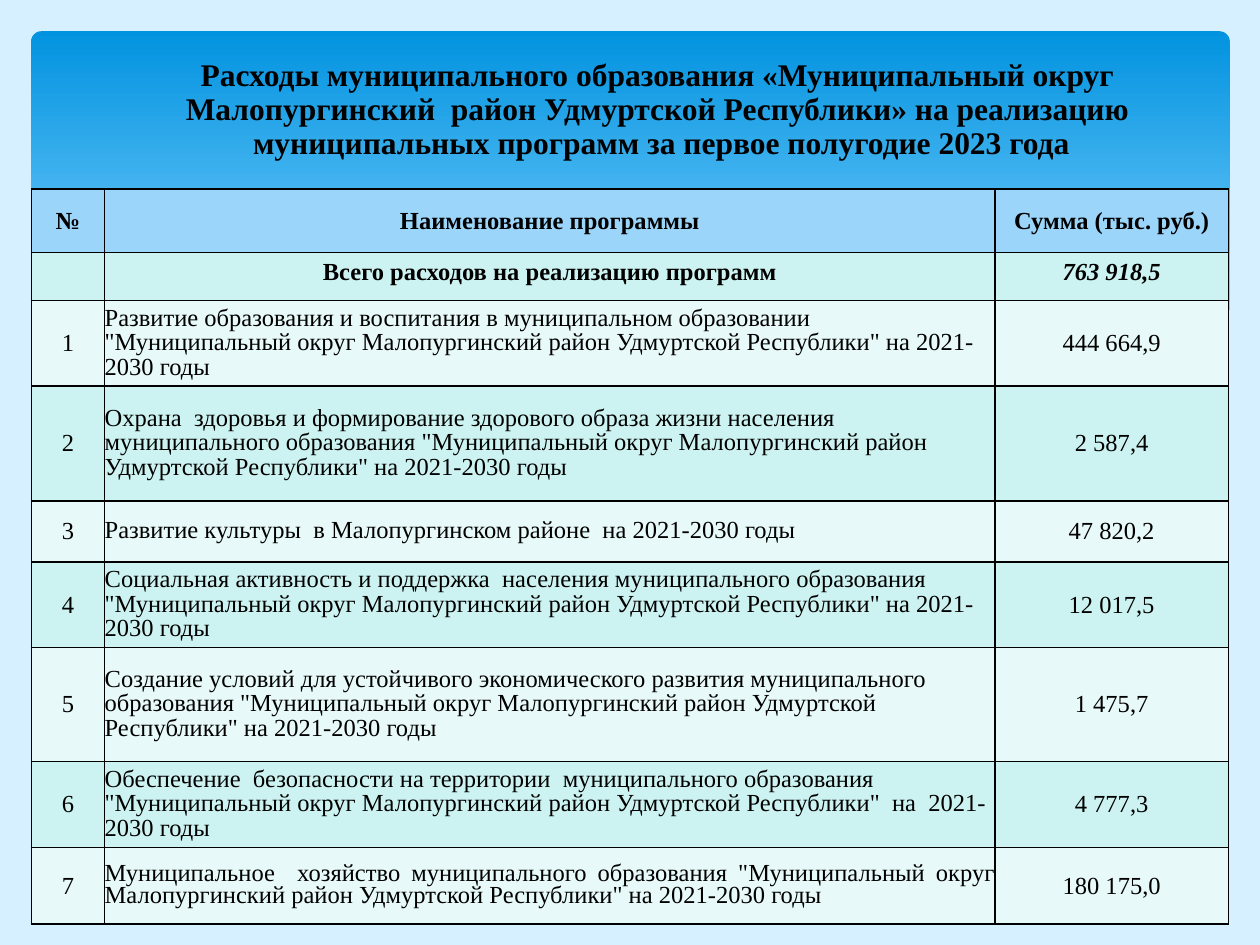
"""Builds a slide with a table of municipal programme spending."""
from lxml.etree import SubElement
from pptx import Presentation
from pptx.dml.color import RGBColor
from pptx.enum.shapes import MSO_SHAPE
from pptx.enum.text import MSO_ANCHOR, MSO_AUTO_SIZE, PP_ALIGN
from pptx.oxml.ns import qn
from pptx.util import Cm, Pt

THEME = {
    "font": "Times New Roman", "title_size": 18, "table_size": 14, "border": 1,
    "text": "000000", "background": "D6F0FF", "panel": ("0293E0", "83D3FE"),
    "header": "9BD5FA", "bands": ("E7F9F8", "CCF3F1"), "wave": "C6E7FC",
}
TITLE = (
    "Расходы муниципального образования «Муниципальный округ ",
    "Малопургинский  район Удмуртской Республики» на реализацию ",
    "муниципальных программ за первое полугодие 2023 года",
)
HEADINGS = ("№", "Наименование программы", "Сумма (тыс. руб.)")
TOTAL = ("", "Всего расходов на реализацию программ", "763 918,5")
DISTRICT = '"Муниципальный округ Малопургинский район Удмуртской Республики"'
PROGRAMMES = (
    (f"Развитие образования и воспитания в муниципальном образовании {DISTRICT} на 2021-2030 годы", "444 664,9"),
    ("Охрана  здоровья и формирование здорового образа жизни населения "
     f"муниципального образования {DISTRICT} на 2021-2030 годы", "2 587,4"),
    ("Развитие культуры  в Малопургинском районе  на 2021-2030 годы", "47 820,2"),
    ("Социальная активность и поддержка  населения муниципального образования "
     f"{DISTRICT} на 2021-2030 годы", "12 017,5"),
    ("Создание условий для устойчивого экономического развития муниципального образования "
     f"{DISTRICT} на 2021-2030 годы", "1 475,7"),
    (f"Обеспечение  безопасности на территории  муниципального образования {DISTRICT}  на  2021-2030 годы", "4 777,3"),
    (f"Муниципальное  хозяйство муниципального образования {DISTRICT} на 2021-2030 годы", "180 175,0"),
)
COLUMN_WIDTHS = (1.48, 17.95, 4.7)
ROW_HEIGHTS = (1.28, 0.96, 1.73, 2.31, 1.23, 1.73, 2.3, 1.73, 1.54)
LEFT, PANEL_TOP, TABLE_TOP = 0.63, 0.63, 3.81
LIGHT_WAVE = (
    (24.79, 5.08), (23.75, 5.26), (21.87, 5.66), (19.79, 6.15), (16.79, 6.73),
    (18.26, 6.91), (20.4, 7.06), (22.38, 6.93), (23.75, 6.65), (24.79, 6.27),
)
BASE_WAVE = (
    (24.82, 6.25), (23.37, 6.73), (21.92, 6.96), (20.55, 7.04), (18.9, 6.96), (16.97, 6.73),
    (14.71, 6.35), (11.35, 5.59), (9.27, 5.13), (7.42, 4.83), (5.84, 4.7), (4.5, 4.67),
    (3.02, 4.75), (1.93, 4.95), (0.58, 5.41), (0.58, 8.36), (24.82, 8.36),
)


def apply(target, values):
    for attribute, value in values.items():
        setattr(target, attribute, value)


def style_text(paragraph, size, bold=False, italic=False, **layout):
    apply(paragraph, layout)
    for run in paragraph.runs:
        apply(run.font, {"name": THEME["font"], "size": Pt(size), "bold": bold, "italic": italic})
        run.font.color.rgb = RGBColor.from_string(THEME["text"])


def paint(fill, color):
    fill.solid()
    fill.fore_color.rgb = RGBColor.from_string(color)


def outline(cell):
    properties = cell._tc.get_or_add_tcPr()
    for index, side in enumerate(("lnL", "lnR", "lnT", "lnB")):
        line = SubElement(properties, qn(f"a:{side}"), w=str(Pt(THEME["border"])))
        SubElement(SubElement(line, qn("a:solidFill")), qn("a:srgbClr"), val=THEME["text"])
        properties.insert(index, line)


def add_panel(slide):
    panel = slide.shapes.add_shape(MSO_SHAPE.ROUNDED_RECTANGLE, Cm(LEFT), Cm(PANEL_TOP), Cm(24.16), Cm(6.86))
    panel.adjustments[0] = 0.03
    panel.shadow.inherit = False
    panel.line.fill.background()
    panel.fill.gradient()
    panel.fill.gradient_angle = 270
    for stop, color, position in zip(panel.fill.gradient_stops, THEME["panel"], (0, 0.9)):
        stop.color.rgb = RGBColor.from_string(color)
        stop.position = position


def add_wave(slide, points, color, opacity=100):
    start, *rest = [(Cm(x), Cm(y)) for x, y in points]
    builder = slide.shapes.build_freeform(*start)
    builder.add_line_segments(rest, close=True)
    wave = builder.convert_to_shape()
    wave.shadow.inherit = False
    wave.line.fill.background()
    paint(wave.fill, color)
    if opacity < 100:
        tint = wave.element.spPr.find(qn("a:solidFill")).find(qn("a:srgbClr"))
        SubElement(tint, qn("a:alpha"), val=str(opacity * 1000))


def place_title(slide):
    title = slide.shapes.title
    title.element.getparent().append(title.element)
    apply(title, {"left": Cm(1.69), "top": Cm(1.05), "width": Cm(23.29), "height": Cm(2.34)})
    frame = title.text_frame
    frame.text = "\v".join(TITLE)
    apply(frame, {"word_wrap": True, "auto_size": MSO_AUTO_SIZE.NONE, "vertical_anchor": MSO_ANCHOR.MIDDLE})
    style_text(frame.paragraphs[0], THEME["title_size"], bold=True, alignment=PP_ALIGN.CENTER, line_spacing=0.9)


def add_programmes(slide):
    numbered = [(str(number), *programme) for number, programme in enumerate(PROGRAMMES, 1)]
    rows = [HEADINGS, TOTAL, *numbered]
    table = slide.shapes.add_table(
        len(rows), len(HEADINGS), Cm(LEFT), Cm(TABLE_TOP), Cm(sum(COLUMN_WIDTHS)), Cm(sum(ROW_HEIGHTS))).table
    apply(table, {"first_row": False, "horz_banding": False})
    for column, width in zip(table.columns, COLUMN_WIDTHS):
        column.width = Cm(width)
    for r, (row, height) in enumerate(zip(rows, ROW_HEIGHTS)):
        table.rows[r].height = Cm(height)
        for c, content in enumerate(row):
            cell = table.cell(r, c)
            paint(cell.fill, THEME["bands"][r % 2] if r else THEME["header"])
            outline(cell)
            cell.vertical_anchor = MSO_ANCHOR.TOP if row is TOTAL else MSO_ANCHOR.MIDDLE
            layout = {"alignment": PP_ALIGN.CENTER}
            if r > 1 and c == 1:
                apply(cell, dict.fromkeys(("margin_left", "margin_top", "margin_right", "margin_bottom"), 0))
                last = row is rows[-1]
                layout = {"alignment": PP_ALIGN.JUSTIFY if last else PP_ALIGN.LEFT,
                          "line_spacing": 0.8 if last else 0.9}
            paragraph = cell.text_frame.paragraphs[0]
            paragraph.add_run().text = content
            style_text(paragraph, THEME["table_size"], bold=r < 2, italic=row is TOTAL and c == 2, **layout)


def main():
    presentation = Presentation()
    apply(presentation, {"slide_width": Cm(25.4), "slide_height": Cm(19.05)})
    slide = presentation.slides.add_slide(presentation.slide_layouts[5])
    paint(slide.background.fill, THEME["background"])
    add_panel(slide)
    add_wave(slide, LIGHT_WAVE, THEME["wave"], opacity=29)
    add_wave(slide, BASE_WAVE, THEME["background"])
    place_title(slide)
    add_programmes(slide)
    presentation.save("out.pptx")


if __name__ == "__main__":
    main()
